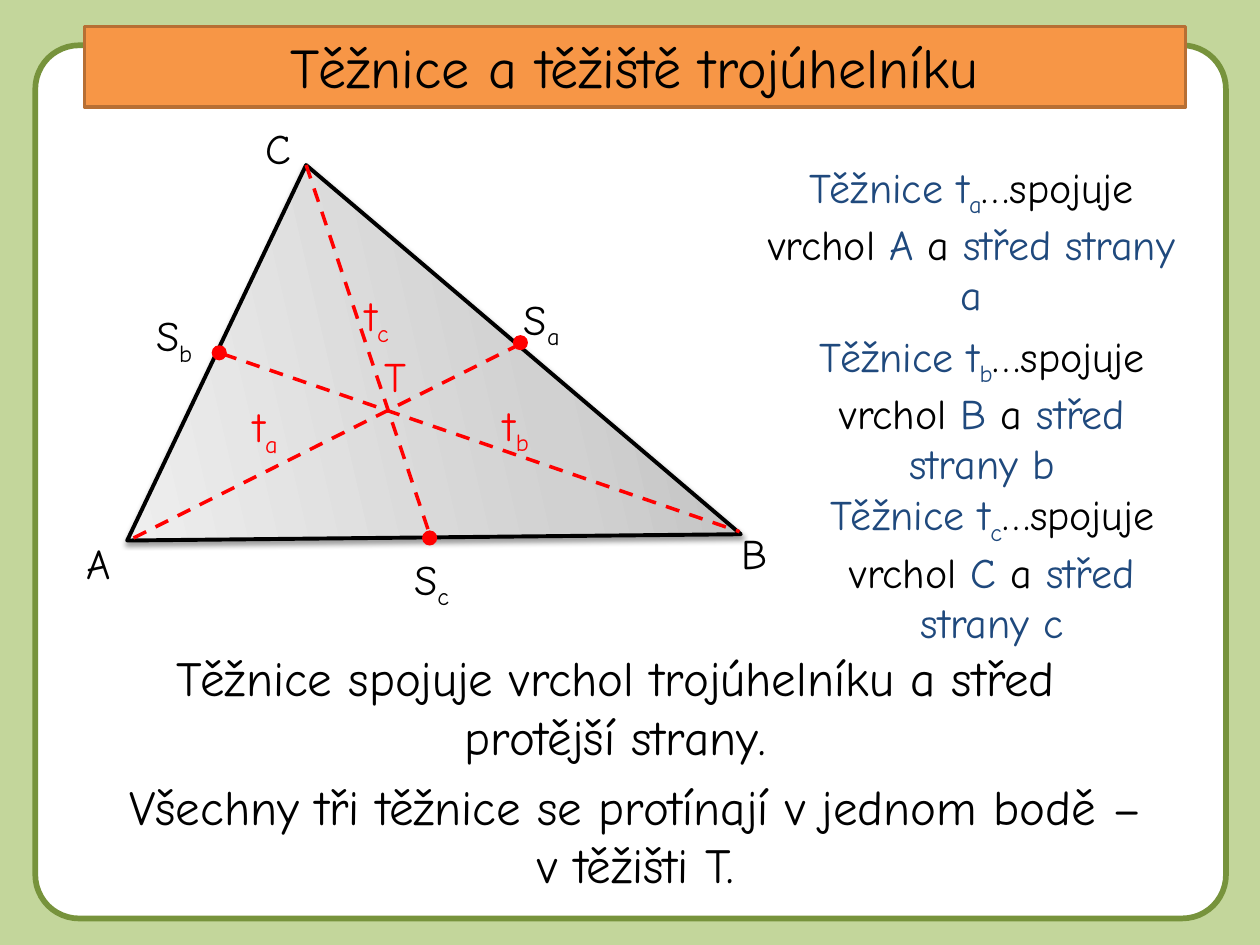
"""Builds the slide on the medians and the centroid of a triangle."""
from copy import deepcopy
from dataclasses import dataclass

from lxml.etree import SubElement
from pptx import Presentation
from pptx.dml.color import RGBColor as Rgb
from pptx.enum.dml import MSO_LINE_DASH_STYLE as Dash
from pptx.enum.shapes import MSO_CONNECTOR as Connector, MSO_SHAPE as Shape
from pptx.enum.text import MSO_ANCHOR as Anchor, MSO_AUTO_SIZE as AutoSize, PP_ALIGN as Align
from pptx.oxml.ns import qn
from pptx.util import Inches, Pt


@dataclass(frozen=True)
class Theme:
    font: str = "Comic Neue"
    background: str = "C3D69B"
    frame: str = "77933C"
    banner: str = "F79646"
    banner_edge: str = "B76F34"
    paper: str = "FFFFFF"
    ink: str = "000000"
    median: str = "FF0000"
    term: str = "1F497D"
    gradient: tuple = ((0, "BDBDBD"), (0.35, "D1D1D1"), (1, "EEEEEE"))
    title_size: int = 32
    statement_size: int = 28
    label_size: int = 24


THEME = Theme()
VERTICES = {"A": (1.01, 4.29), "B": (5.88, 4.24), "C": (2.43, 1.31)}
MEDIANS = (
    ((1.77, 2.81), (5.87, 4.22)),
    ((2.43, 1.31), (3.43, 4.3)),
    ((1.06, 4.27), (4.13, 2.73)),
)
MIDPOINTS = ((3.41, 4.27), (1.74, 2.8), (4.13, 2.72))
DOT = 0.12
VERTEX_LABELS = (("A", 0.59, 4.22, 0.47), ("C", 2.01, 0.92, 0.41), ("B", 5.79, 4.14, 0.47))
MEDIAN_LABELS = (("b", 3.9, 3.12), ("c", 2.8, 2.25), ("a", 1.91, 3.13))
MIDPOINT_LABELS = (("a", 4.06, 2.28), ("b", 1.14, 2.41), ("c", 3.19, 4.34))
DEFINITIONS = (
    ("a", (5.94, 1.23, 3.54, 1.31)),
    ("b", (6.1, 2.57, 3.39, 1.31)),
    ("c", (6.18, 3.83, 3.39, 1.31)),
)


def write_runs(frame, runs, size, align=Align.LEFT):
    """Fill a text frame with (text, colour, is_subscript) runs."""
    frame.word_wrap = True
    frame.auto_size = AutoSize.SHAPE_TO_FIT_TEXT
    frame.vertical_anchor = Anchor.TOP
    paragraph = frame.paragraphs[0]
    paragraph.alignment = align
    for text, color, is_subscript in runs:
        run = paragraph.add_run()
        run.text = text
        run.font.name = THEME.font
        run.font.size = Pt(size)
        run.font.color.rgb = Rgb.from_string(color)
        if is_subscript:
            run.font._element.set("baseline", "-25000")


def add_panel(slide, kind, box, fill, edge=None, width=0):
    """Add a flat preset shape with an optional outline."""
    panel = slide.shapes.add_shape(kind, *map(Inches, box))
    panel.shadow.inherit = False
    panel.fill.solid()
    panel.fill.fore_color.rgb = Rgb.from_string(fill)
    if edge:
        panel.line.color.rgb = Rgb.from_string(edge)
        panel.line.width = Pt(width)
    else:
        panel.line.fill.background()
    return panel


def add_statement(slide, text, box):
    """Add a centred sentence on a white panel."""
    panel = add_panel(slide, Shape.RECTANGLE, box, THEME.paper)
    write_runs(panel.text_frame, [(text, THEME.ink, False)], THEME.statement_size, Align.CENTER)


def add_label(slide, box, runs, align=Align.LEFT):
    """Add a text box of label size."""
    label = slide.shapes.add_textbox(*map(Inches, box))
    write_runs(label.text_frame, runs, THEME.label_size, align)


def add_symbol(slide, box, letter, color, index=""):
    """Add a letter with an optional subscript index."""
    runs = [(letter, color, False)]
    if index:
        runs.append((index, color, True))
    add_label(slide, box, runs)


def add_definition(slide, side, box):
    """Add the definition of the median that meets the given side."""
    add_label(slide, box, [
        ("Těžnice t", THEME.term, False),
        (side, THEME.term, True),
        ("…spojuje vrchol ", THEME.ink, False),
        (side.upper(), THEME.term, False),
        (" a ", THEME.ink, False),
        (f"střed strany {side}", THEME.term, False),
    ], Align.CENTER)


def add_triangle(slide):
    """Add the shaded triangle with its soft shadow."""
    start, *others = [tuple(map(Inches, point)) for point in VERTICES.values()]
    builder = slide.shapes.build_freeform(*start)
    builder.add_line_segments(others, close=True)
    triangle = builder.convert_to_shape()
    triangle.line.color.rgb = Rgb.from_string(THEME.ink)
    triangle.line.width = Pt(2.25)

    triangle.fill.gradient()
    triangle.fill.gradient_angle = 193
    properties = triangle._element.spPr
    stop_list = properties.find(f".//{qn('a:gsLst')}")
    stop_list.append(deepcopy(stop_list[0]))
    for stop, (position, color) in zip(triangle.fill.gradient_stops, THEME.gradient):
        stop.position = position
        stop.color.rgb = Rgb.from_string(color)

    triangle.shadow.inherit = False
    shadow = SubElement(properties.find(qn("a:effectLst")), qn("a:outerShdw"),
                        blurRad=str(Pt(3.1)), dist=str(Pt(1.6)), dir="5400000", rotWithShape="0")
    shade = SubElement(shadow, qn("a:srgbClr"), val=THEME.ink)
    SubElement(shade, qn("a:alpha"), val="38000")


def add_median(slide, start, end):
    """Add a dashed median line."""
    median = slide.shapes.add_connector(Connector.STRAIGHT, *map(Inches, start + end))
    median.line.color.rgb = Rgb.from_string(THEME.median)
    median.line.width = Pt(2)
    median.line.dash_style = Dash.DASH
    SubElement(median._element.spPr, qn("a:effectLst"))


def main():
    """Build and save the slide."""
    deck = Presentation()
    deck.slide_width, deck.slide_height = Inches(10), Inches(7.5)
    slide = deck.slides.add_slide(deck.slide_layouts[6])
    slide.background.fill.solid()
    slide.background.fill.fore_color.rgb = Rgb.from_string(THEME.background)

    page = add_panel(slide, Shape.ROUNDED_RECTANGLE, (0.28, 0.36, 9.45, 6.93),
                     THEME.paper, THEME.frame, 3.25)
    page.adjustments[0] = 0.05
    banner = add_panel(slide, Shape.RECTANGLE, (0.67, 0.21, 8.74, 0.64),
                       THEME.banner, THEME.banner_edge, 2)
    write_runs(banner.text_frame, [("Těžnice a těžiště trojúhelníku", THEME.ink, False)],
               THEME.title_size, Align.CENTER)
    add_statement(slide, "Těžnice spojuje vrchol trojúhelníku a střed protější strany.",
                  (0.67, 5.09, 8.43, 1.04))

    add_triangle(slide)
    for letter, left, top, width in VERTEX_LABELS:
        add_symbol(slide, (left, top, width, 0.5), letter, THEME.ink)
    for start, end in MEDIANS:
        add_median(slide, start, end)
    for index, left, top in MEDIAN_LABELS:
        add_symbol(slide, (left, top, 0.55, 0.5), "t", THEME.median, index)
    for index, left, top in MIDPOINT_LABELS:
        add_symbol(slide, (left, top, 0.63, 0.5), "S", THEME.ink, index)
    for x, y in MIDPOINTS:
        add_panel(slide, Shape.OVAL, (x - DOT / 2, y - DOT / 2, DOT, DOT), THEME.median)

    for side, box in DEFINITIONS:
        add_definition(slide, side, box)
    add_statement(slide, "Všechny tři těžnice se protínají v jednom bodě – v těžišti T.",
                  (0.83, 6.11, 8.43, 1.04))
    add_symbol(slide, (2.95, 2.73, 0.47, 0.5), "T", THEME.median)
    deck.save("out.pptx")


if __name__ == "__main__":
    main()
